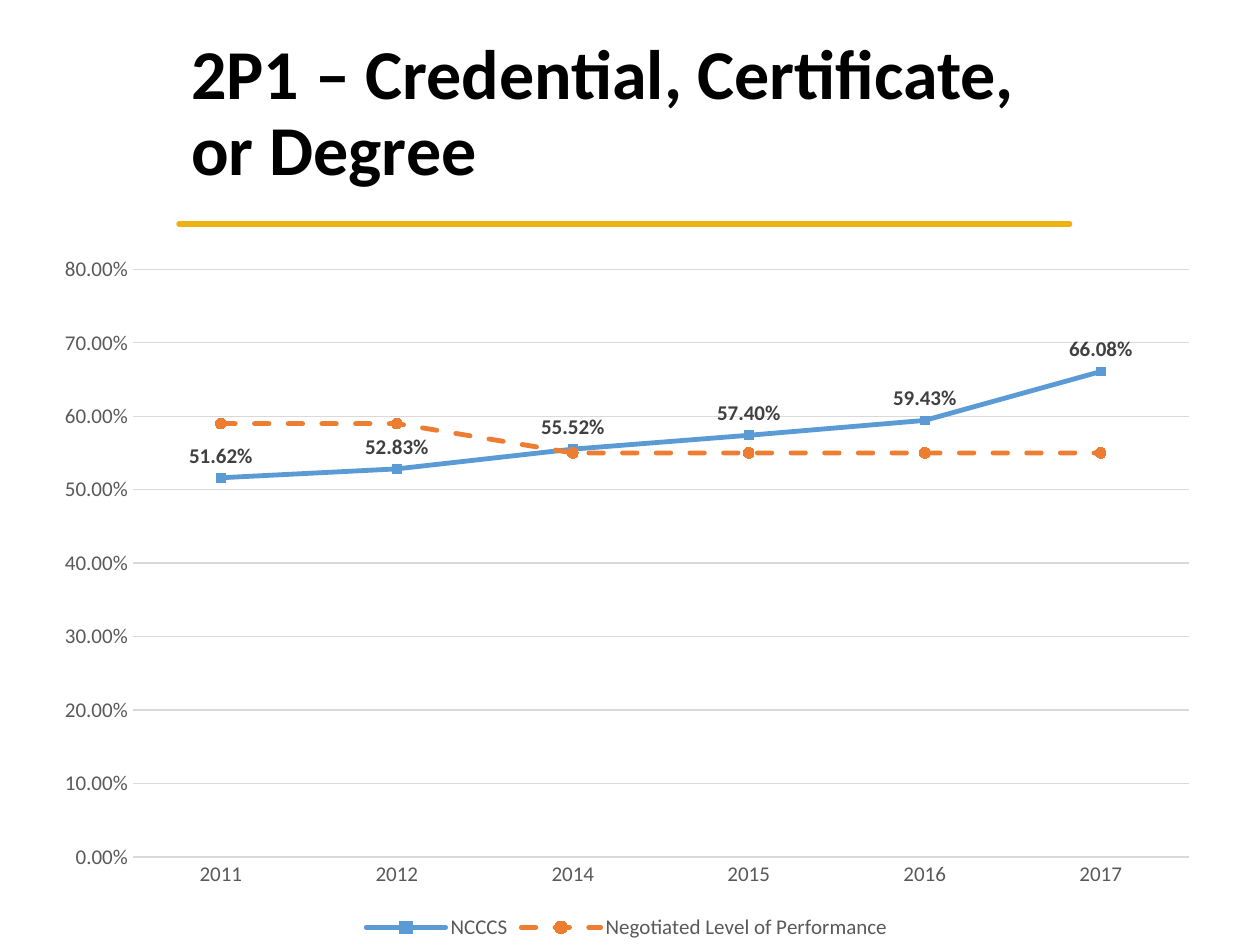
from dataclasses import dataclass
from typing import Optional

from lxml import etree
from pptx import Presentation
from pptx import util as u
from pptx.chart.data import CategoryChartData
from pptx.dml.color import RGBColor
from pptx.enum import chart as ch
from pptx.enum import dml, shapes, text
from pptx.oxml.ns import qn

WIDTH, HEIGHT = u.Inches(10), u.Inches(7.5)
FONT = "Calibri"
BLACK = RGBColor(0x00, 0x00, 0x00)
GOLD = RGBColor(0xEE, 0xB1, 0x11)
BLUE = RGBColor(0x5B, 0x9B, 0xD5)
MARKER_BLUE = RGBColor(0x55, 0x9B, 0xDB)
ORANGE = RGBColor(0xED, 0x7D, 0x31)
MARKER_ORANGE = RGBColor(0xF6, 0x7B, 0x28)
AXIS_GREY = RGBColor(0x59, 0x59, 0x59)
LABEL_GREY = RGBColor(0x40, 0x40, 0x40)
GRID_GREY = RGBColor(0xD9, 0xD9, 0xD9)
PERCENT = "0.00%"
YEARS = ("2011", "2012", "2014", "2015", "2016", "2017")


@dataclass(frozen=True)
class Trend:
    """One line of the chart."""
    name: str
    rates: tuple[float, ...]
    color: RGBColor
    marker: ch.XL_MARKER_STYLE
    marker_size: int
    marker_color: RGBColor
    dash: Optional[dml.MSO_LINE] = None
    labelled: bool = False


TRENDS = (
    Trend("NCCCS", (0.5162, 0.5283, 0.5552, 0.574, 0.5943, 0.6608),
          BLUE, ch.XL_MARKER_STYLE.SQUARE, 5, MARKER_BLUE, labelled=True),
    Trend("Negotiated Level of Performance", (0.59, 0.59, 0.55, 0.55, 0.55, 0.55),
          ORANGE, ch.XL_MARKER_STYLE.CIRCLE, 6, MARKER_ORANGE, dash=dml.MSO_LINE.DASH),
)


def box(left: float, top: float, width: float, height: float) -> tuple[int, ...]:
    """Turn shares of the slide's size into lengths."""
    return int(left * WIDTH), int(top * HEIGHT), int(width * WIDTH), int(height * HEIGHT)


def set_font(font, size: float, color: RGBColor, bold: bool = False) -> None:
    """Apply the slide's typeface with a size, colour and weight."""
    font.name, font.size, font.bold = FONT, u.Pt(size), bold
    font.color.rgb = color


def set_line(line, color: RGBColor, width: float) -> None:
    """Give a line its colour and its width in points."""
    line.color.rgb = color
    line.width = u.Pt(width)


def add_title(slide, wording: str) -> None:
    """Write the heading."""
    frame = slide.shapes.add_textbox(*box(0.142, 0.025, 0.805, 0.193)).text_frame
    frame.word_wrap = True
    frame.vertical_anchor = text.MSO_ANCHOR.MIDDLE
    frame.text = wording
    heading = frame.paragraphs[0]
    heading.line_spacing = 0.9
    for run in heading.runs:
        set_font(run.font, 40, BLACK, bold=True)


def add_rule(slide) -> None:
    """Draw the gold rule under the heading."""
    left, top, width, _ = box(0.142, 0.237, 0.707, 0)
    rule = slide.shapes.add_connector(
        shapes.MSO_CONNECTOR.STRAIGHT, left, top, left + width, top)
    set_line(rule.line, GOLD, 3)
    rule.line._get_or_add_ln().set("cap", "rnd")
    etree.SubElement(rule._element.spPr, qn("a:effectLst"))


def style_trend(series, trend: Trend) -> None:
    """Format one line, its markers and its labels."""
    series.smooth = False
    set_line(series.format.line, trend.color, 2.75)
    series.format.line._get_or_add_ln().set("cap", "rnd")
    if trend.dash:
        series.format.line.dash_style = trend.dash
    marker = series.marker
    marker.style, marker.size = trend.marker, trend.marker_size
    marker.format.fill.solid()
    marker.format.fill.fore_color.rgb = trend.marker_color
    set_line(marker.format.line, trend.marker_color, 0.75)
    if trend.labelled:
        labels = series.data_labels
        labels.show_value = True
        labels.number_format, labels.number_format_is_linked = PERCENT, False
        labels.position = ch.XL_LABEL_POSITION.ABOVE
        set_font(labels.font, 12, LABEL_GREY, bold=True)


def style_axes(chart) -> None:
    """Format both axes and the gridlines."""
    for axis in (chart.category_axis, chart.value_axis):
        axis.major_tick_mark = axis.minor_tick_mark = ch.XL_TICK_MARK.NONE
        set_font(axis.tick_labels.font, 12, AXIS_GREY)
    set_line(chart.category_axis.format.line, GRID_GREY, 1)
    rates = chart.value_axis
    rates.minimum_scale, rates.maximum_scale, rates.major_unit = 0, 0.8, 0.1
    rates.format.line.fill.background()
    set_line(rates.major_gridlines.format.line, GRID_GREY, 0.75)
    rates.tick_labels.number_format = PERCENT
    rates.tick_labels.number_format_is_linked = False


def add_trend_chart(slide) -> None:
    """Chart the rates by year."""
    data = CategoryChartData(number_format=PERCENT)
    data.categories = YEARS
    for trend in TRENDS:
        data.add_series(trend.name, trend.rates)
    chart = slide.shapes.add_chart(
        ch.XL_CHART_TYPE.LINE_MARKERS, *box(0.033, 0.257, 0.929, 0.743), data).chart
    set_font(chart.font, 10, BLACK)
    chart.has_title = False
    chart.has_legend = True
    chart.legend.position = ch.XL_LEGEND_POSITION.BOTTOM
    chart.legend.include_in_layout = False
    set_font(chart.legend.font, 12, AXIS_GREY)
    chart.plots[0].vary_by_categories = False
    style_axes(chart)
    for series, trend in zip(chart.plots[0].series, TRENDS):
        style_trend(series, trend)


def main() -> None:
    """Build and save the slide."""
    deck = Presentation()
    deck.slide_width, deck.slide_height = WIDTH, HEIGHT
    slide = deck.slides.add_slide(deck.slide_layouts[6])
    add_rule(slide)
    add_trend_chart(slide)
    add_title(slide, "2P1 – Credential, Certificate, \vor Degree")
    deck.save("out.pptx")


if __name__ == "__main__":
    main()
